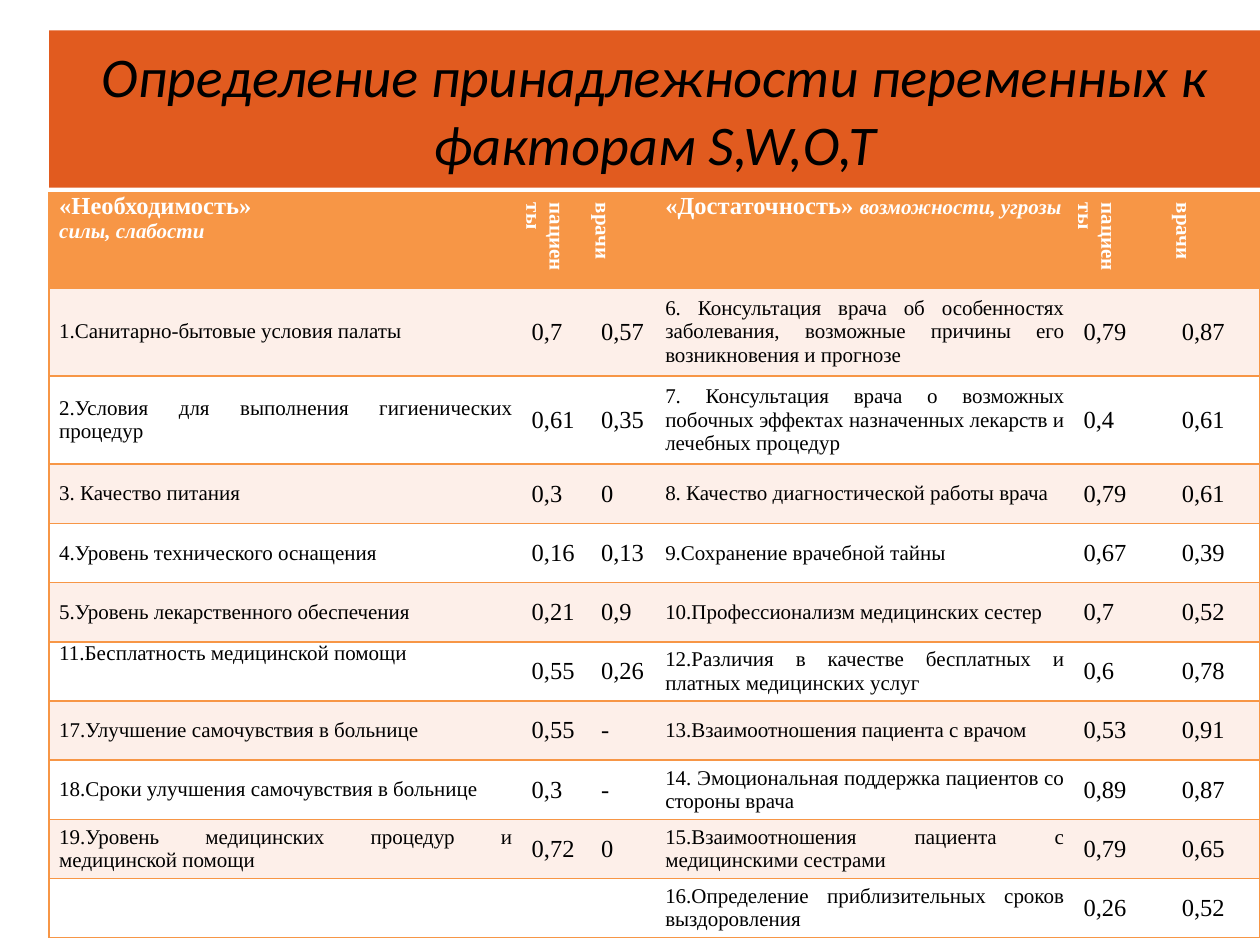
from lxml.etree import SubElement
from pptx import Presentation
from pptx.dml.color import RGBColor
from pptx.enum.shapes import MSO_SHAPE
from pptx.enum.text import MSO_ANCHOR as ANCHOR, PP_ALIGN as ALIGN
from pptx.oxml.ns import qn
from pptx.util import Inches, Pt

COLS = [3.75, 0.55, 0.51, 3.32, 0.78, 0.7]
ROWS = [0.5] + [0.7] * 2 + [0.47] * 8
NO_STYLE = "{2D5ABB26-0587-4C30-8999-92F81FD0307C}"
FACTORS = [
    ("1.Санитарно-бытовые условия палаты", "0,7", "0,57",
     "6. Консультация врача об особенностях заболевания, возможные причины "
     "его возникновения и прогнозе", "0,79", "0,87"),
    ("2.Условия для выполнения гигиенических процедур", "0,61", "0,35",
     "7. Консультация врача о возможных побочных эффектах назначенных "
     "лекарств и лечебных процедур", "0,4", "0,61"),
    ("3. Качество питания", "0,3", "0",
     "8. Качество диагностической работы врача", "0,79", "0,61"),
    ("4.Уровень технического оснащения", "0,16", "0,13",
     "9.Сохранение врачебной тайны", "0,67", "0,39"),
    ("5.Уровень лекарственного обеспечения", "0,21", "0,9",
     "10.Профессионализм медицинских сестер", "0,7", "0,52"),
    ("11.Бесплатность медицинской помощи", "0,55", "0,26",
     "12.Различия в качестве бесплатных и платных медицинских услуг",
     "0,6", "0,78"),
    ("17.Улучшение самочувствия в больнице", "0,55", "-",
     "13.Взаимоотношения пациента с врачом", "0,53", "0,91"),
    ("18.Сроки улучшения самочувствия в больнице", "0,3", "-",
     "14. Эмоциональная поддержка пациентов со стороны врача",
     "0,89", "0,87"),
    ("19.Уровень медицинских процедур и медицинской помощи", "0,72", "0",
     "15.Взаимоотношения пациента с медицинскими сестрами",
     "0,79", "0,65"),
    ("", "", "", "16.Определение приблизительных сроков выздоровления",
     "0,26", "0,52"),
]


def color(value):
    return RGBColor.from_string(value)


class Deck:
    title_font = "Calibri"
    body_font = "Times New Roman"
    banner = "E15B1F"
    accent = "F79646"
    tint = "FDEFE9"
    white = "FFFFFF"
    black = "000000"

    def __init__(self):
        self.prs = Presentation()
        self.prs.slide_width = Inches(10)
        self.prs.slide_height = Inches(7.5)
        self.slide = self.prs.slides.add_slide(self.prs.slide_layouts[6])

    def style(self, r, font, size, ink, bold=False, italic=False):
        r.font.name = font
        r.font.size = Pt(size)
        r.font.color.rgb = color(ink)
        r.font.bold = bold
        r.font.italic = italic

    def title(self, text, left, top, width, height):
        sp = self.slide.shapes.add_shape(
            MSO_SHAPE.RECTANGLE, Inches(left), Inches(top),
            Inches(width), Inches(height))
        sp.shadow.inherit = False
        sp.fill.solid()
        sp.fill.fore_color.rgb = color(self.banner)
        sp.line.fill.background()
        tf = sp.text_frame
        tf.word_wrap = True
        tf.vertical_anchor = ANCHOR.MIDDLE
        tf.text = text
        p = tf.paragraphs[0]
        p.alignment = ALIGN.CENTER
        r = p.runs[0]
        self.style(r, self.title_font, 32, self.black, italic=True)
        r._r.get_or_add_rPr().set("kern", "0")

    def table(self, left, top, cols, rows):
        frame = self.slide.shapes.add_table(
            len(rows), len(cols), Inches(left), Inches(top),
            Inches(sum(cols)), Inches(sum(rows)))
        table = frame.table
        table.first_row = table.horz_banding = False
        frame._element.find(".//" + qn("a:tableStyleId")).text = NO_STYLE
        for column, width in zip(table.columns, cols):
            column.width = Inches(width)
        for row, height in zip(table.rows, rows):
            row.height = Inches(height)
        return table

    def border(self, cell, sides):
        for side in sides:
            ln = SubElement(cell._tc.get_or_add_tcPr(), qn(f"a:ln{side}"),
                            w=str(Pt(1)))
            fill = SubElement(ln, qn("a:solidFill"))
            SubElement(fill, qn("a:srgbClr"), val=self.accent)

    def cell(self, cell, fill, sides, anchor):
        self.border(cell, sides)
        cell.fill.solid()
        cell.fill.fore_color.rgb = color(fill)
        cell.margin_left = Inches(0.08)
        cell.margin_right = Inches(0.07)
        cell.margin_top = cell.margin_bottom = 0
        cell.vertical_anchor = anchor

    def paragraph(self, p, parts, ink, bold=False):
        p.alignment = ALIGN.JUSTIFY
        for text, size, italic in parts:
            r = p.add_run()
            r.text = text
            self.style(r, self.body_font, size, ink, bold, italic)

    def header(self, cell, paragraphs, sides, vertical):
        self.cell(cell, self.accent, sides, ANCHOR.TOP)
        if vertical:
            cell._tc.get_or_add_tcPr().set("vert", "vert")
        tf = cell.text_frame
        for i, parts in enumerate(paragraphs):
            p = tf.add_paragraph() if i else tf.paragraphs[0]
            self.paragraph(p, parts, self.white, bold=True)

    def value(self, cell, text, size, fill, sides, anchor):
        self.cell(cell, fill, sides, anchor)
        if text:
            p = cell.text_frame.paragraphs[0]
            self.paragraph(p, [(text, size, False)], self.black)


def main():
    deck = Deck()
    deck.title("Определение принадлежности переменных к факторам S,W,O,T",
               0.39, 0.24, 9.61, 1.25)
    table = deck.table(0.39, 1.53, COLS, ROWS)
    sides = ["LTB"] + ["TB"] * 4 + ["RTB"]
    groups = [[("пациенты", 12, False)]], [[("врачи", 12, False)]]
    headers = [
        [[("«Необходимость»", 14, False)], [("силы, слабости", 12, True)]],
        *groups,
        [[("«Достаточность» ", 14, False), ("возможности, угрозы", 12, True)]],
        *groups,
    ]
    for c, paragraphs in enumerate(headers):
        deck.header(table.cell(0, c), paragraphs, sides[c], c % 3 > 0)
    for r, values in enumerate(FACTORS, 1):
        fill = deck.tint if r % 2 else deck.white
        for c, text in enumerate(values):
            top = text.startswith("11.")
            deck.value(table.cell(r, c), text, 14 if c % 3 else 12, fill,
                       sides[c], ANCHOR.TOP if top else ANCHOR.MIDDLE)
    deck.prs.save("out.pptx")


if __name__ == "__main__":
    main()
